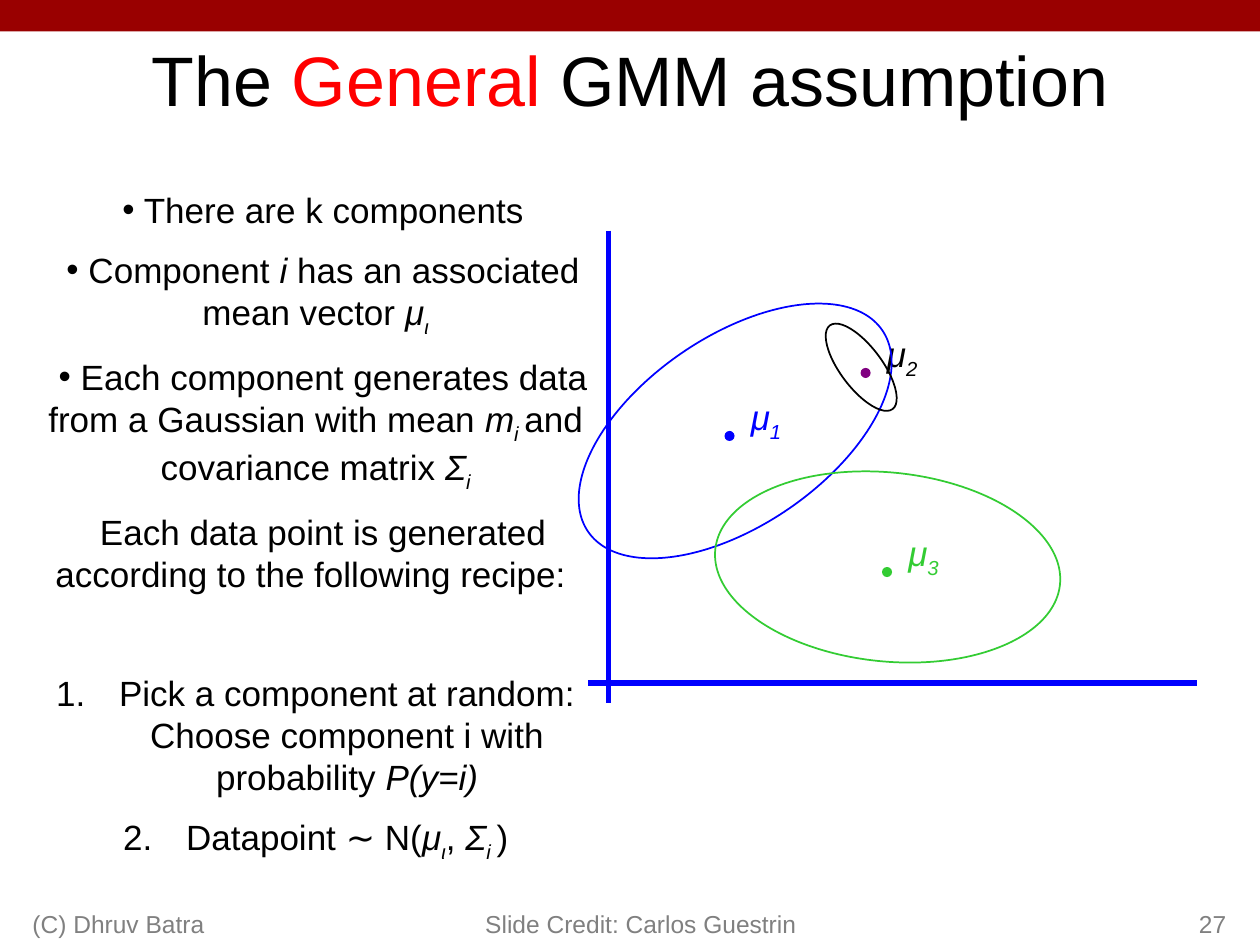
from pptx import Presentation
from pptx.dml.color import RGBColor
from pptx.enum.shapes import MSO_CONNECTOR, MSO_SHAPE
from pptx.enum.text import MSO_ANCHOR, PP_ALIGN
from pptx.oxml.ns import qn
from pptx.util import Inches, Pt
from lxml import etree

OVAL, RECT = MSO_SHAPE.OVAL, MSO_SHAPE.RECTANGLE
LINE = MSO_CONNECTOR.STRAIGHT
TOP, MID, LOW = MSO_ANCHOR.TOP, MSO_ANCHOR.MIDDLE, MSO_ANCHOR.BOTTOM
LEFT, MIDST, RIGHT = PP_ALIGN.LEFT, PP_ALIGN.CENTER, PP_ALIGN.RIGHT
FONT = "Arial"
COLORS = {
    "bar": "990000", "text": "000000", "accent": "FF0000", "foot": "808080",
    "blue": "0000FF", "purple": "800080", "green": "33CC33",
}


def tint(name):
    """Return the named colour."""
    return RGBColor.from_string(COLORS[name])


def add_text(slide, box, anchor=TOP, wrap=True):
    """Add an empty text box and return its frame."""
    frame = slide.shapes.add_textbox(*map(Inches, box)).text_frame
    frame.word_wrap = wrap
    frame.vertical_anchor = anchor
    return frame


def add_run(para, text, size, color, style=""):
    """Add a run; style i is italic, s is italic subscript."""
    run = para.add_run()
    run.text = text
    font = run.font
    font.name, font.size, font.italic = FONT, Pt(size), bool(style)
    font.color.rgb = tint(color)
    if style == "s":
        run._r.get_or_add_rPr().set("baseline", "-25000")


def add_shape(slide, kind, box, fill=None, line=None, turn=0):
    """Add a filled or outlined shape."""
    shape = slide.shapes.add_shape(kind, *map(Inches, box))
    shape.shadow.inherit = False
    shape.rotation = turn
    if fill:
        shape.fill.solid()
        shape.fill.fore_color.rgb = tint(fill)
    else:
        shape.fill.background()
    if line:
        shape.line.color.rgb = tint(line)
        shape.line.width = Pt(1)
    else:
        shape.line.fill.background()


def add_axis(slide, start, end):
    """Add a thick blue axis line."""
    axis = slide.shapes.add_connector(LINE, *map(Inches, start + end))
    axis.line.color.rgb = tint("blue")
    axis.line.width = Pt(3)
    etree.SubElement(axis._element.spPr, qn("a:effectLst"))


def set_list(para, mark):
    """Set the indent and the bullet or number of a paragraph."""
    props = para._p.get_or_add_pPr()
    margin, indent = (0.5, -0.5) if mark == "1" else (0, 0.12)
    props.set("marL", str(Inches(margin)))
    props.set("indent", str(Inches(indent)))
    if not mark:
        return
    hue = etree.SubElement(props, qn("a:buClr"))
    etree.SubElement(hue, qn("a:srgbClr"), val=COLORS["text"])
    etree.SubElement(props, qn("a:buFont"), typeface=FONT)
    if mark == "1":
        etree.SubElement(props, qn("a:buAutoNum"), type="arabicPeriod")
    else:
        etree.SubElement(props, qn("a:buChar"), char=mark)


def add_header(slide, box):
    """Place the top bar and the title."""
    left, top, width, height = box
    add_shape(slide, RECT, (left, top, width, 0.25), "bar")
    title = (left + 0.75, top + 0.25, width - 1.5, height - 0.25)
    para = add_text(slide, title, MID).paragraphs[0]
    para.alignment = MIDST
    for text, color in (("The ", "text"), ("General", "accent"),
                        (" GMM assumption", "text")):
        add_run(para, text, 40, color)


def add_plot(slide, box):
    """Place the axes, means and covariance ellipses."""
    left, top, width, height = box
    right, base = left + width, top + height
    x, y = left + 0.41, base - 0.16
    add_axis(slide, (x, top), (x, base))
    add_axis(slide, (left + 0.25, y), (right, y))
    means = (
        (1.33, 1.59, "1", "blue", "blue"),
        (2.41, 1.09, "2", "purple", "text"),
        (2.58, 2.67, "3", "green", "green"),
    )
    for dx, dy, index, dot, color in means:
        x, y = left + dx, top + dy
        add_shape(slide, OVAL, (x, y, 0.08, 0.08), dot)
        frame = add_text(slide, (x + 0.08, y - 0.33, 0.5, 0.43), wrap=False)
        para = frame.paragraphs[0]
        para.alignment = MIDST
        add_run(para, "μ", 20, color, "i")
        add_run(para, index, 20, color, "s")
    rings = (
        (0, 0.84, 2.83, 1.5, 325.6, "blue"),
        (2, 0.92, 0.83, 0.33, 53.1, "text"),
        (1.25, 1.92, 2.75, 1.5, 5.8, "green"),
    )
    for dx, dy, wide, high, turn, color in rings:
        ring = (left + dx, top + dy, wide, high)
        add_shape(slide, OVAL, ring, line=color, turn=turn)


def add_notes(slide, box):
    """Place the model description and the recipe."""
    items = (
        ("•", 0, ((" There are k components", ""),)),
        ("•", 10, ((" Component ", ""), ("i", "i"),
                   (" has an associated mean vector ", ""),
                   ("μ", "i"), ("ι", "s"))),
        ("•", 10, ((" Each component generates data from a Gaussian "
                    "with mean ", ""), ("m", "i"), ("i ", "s"),
                   ("and covariance matrix ", ""), ("Σ", "i"), ("i", "s"))),
        ("", 10, (("Each data point is generated according to the "
                   "following recipe: ", ""),)),
        ("1", 44, (("Pick a component at random: Choose component i with "
                    "probability ", ""), ("P(y=i)", "i"))),
        ("1", 10, (("Datapoint ∼ Ν(", ""), ("μ", "i"), ("ι", "s"),
                   (", ", ""), ("Σ", "i"), ("i ", "s"), (")", ""))),
    )
    frame = add_text(slide, box)
    for place, (mark, gap, runs) in enumerate(items):
        para = frame.add_paragraph() if place else frame.paragraphs[0]
        para.alignment = MIDST
        set_list(para, mark)
        para.space_before = Pt(gap)
        for text, style in runs:
            add_run(para, text, 20, "text", style)


def add_footer(slide, box):
    """Place the owner, credit and page number."""
    left, top, width, height = box
    parts = (
        (0, 3.17, LEFT, "(C) Dhruv Batra"),
        (3.34, 2.92, RIGHT, "Slide Credit: Carlos Guestrin"),
        (width - 2.08, 2.08, RIGHT, "27"),
    )
    for dx, wide, align, text in parts:
        frame = add_text(slide, (left + dx, top, wide, height), LOW)
        para = frame.paragraphs[0]
        para.alignment = align
        add_run(para, text, 14, "foot")


def main():
    """Build and save the slide."""
    deck = Presentation()
    deck.slide_width, deck.slide_height = Inches(10), Inches(7.5)
    slide = deck.slides.add_slide(deck.slide_layouts[6])
    add_header(slide, (0, 0, 10, 1))
    add_plot(slide, (4.42, 1.83, 5.08, 3.75))
    add_notes(slide, (0.17, 1.45, 4.67, 5.49))
    add_footer(slide, (0.16, 7, 9.67, 0.5))
    deck.save("out.pptx")


if __name__ == "__main__":
    main()
